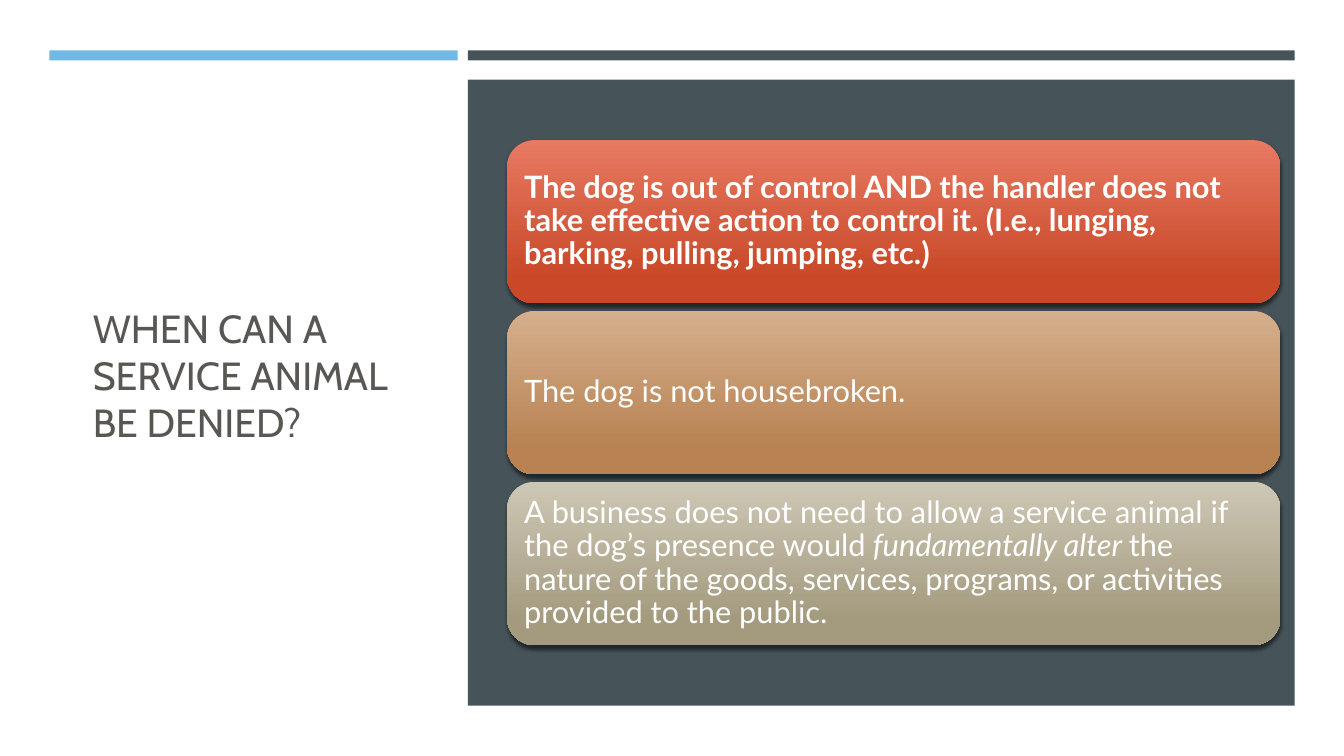
"""Build the slide on when a service animal can be denied."""
from lxml import etree
from pptx import Presentation
from pptx.dml.color import RGBColor
from pptx.enum.shapes import MSO_SHAPE
from pptx.enum.text import MSO_ANCHOR, MSO_AUTO_SIZE, PP_ALIGN
from pptx.oxml.ns import qn
from pptx.util import Inches, Pt

RECT, ROUNDED = MSO_SHAPE.RECTANGLE, MSO_SHAPE.ROUNDED_RECTANGLE
MIDDLE, LEFT = MSO_ANCHOR.MIDDLE, PP_ALIGN.LEFT
NO_AUTOFIT = MSO_AUTO_SIZE.NONE

COLORS = {"white": "FFFFFF", "title": "585753", "blue": "71B9E4",
          "slate": "465359", "shadow": "000000"}
TITLE = "WHEN CAN A SERVICE ANIMAL BE DENIED?"
PANELS = [
    ("blue", 0.49, 0.5, 4.05, 0.1),
    ("slate", 4.64, 0.5, 8.2, 0.1),
    ("slate", 4.64, 0.79, 8.2, 6.21),
]
REASONS = [
    (("E77A62", "C94828"), [
        ("The dog is out of control AND the handler does not take effective "
         "action to control it. (I.e., lunging, barking, pulling, jumping, etc.)", "bold")]),
    (("D5AF8D", "B88252"), [("The dog is not housebroken.", "")]),
    (("CDC7B5", "A49B7F"), [
        ("A business does not need to allow a service animal if the dog’s presence would", ""),
        (" fundamentally alter ", "italic"),
        ("the nature of the goods, services, programs, or activities provided "
         "to the public.", "")]),
]
CARD_LEFT, CARD_TOP, CARD_W, CARD_H, CARD_GAP = 5.03, 1.39, 7.67, 1.62, 0.075


def rgb(name):
    return RGBColor.from_string(COLORS.get(name, name))


def add_box(s, kind, left, top, width, height):
    sp = s.shapes.add_shape(kind, Inches(left), Inches(top), Inches(width), Inches(height))
    sp.shadow.inherit = False
    sp.line.fill.background()
    return sp


def style_run(r, font, size, color):
    r.font.name = font
    r.font.size = Pt(size)
    r.font.color.rgb = rgb(color)


def add_shadow(sp):
    effects = sp.element.spPr.find(qn("a:effectLst"))
    outer = etree.SubElement(effects, qn("a:outerShdw"), blurRad=str(Pt(3)),
                             dist=str(Pt(2)), dir="5400000", rotWithShape="0")
    color = etree.SubElement(outer, qn("a:srgbClr"), val=COLORS["shadow"])
    etree.SubElement(color, qn("a:alpha"), val="55000")


def add_card(s, top, gradient, runs):
    sp = add_box(s, ROUNDED, CARD_LEFT, top, CARD_W, CARD_H)
    sp.fill.gradient()
    sp.fill.gradient_angle = 270
    for stop, color, position in zip(sp.fill.gradient_stops, gradient, (0, 0.84)):
        stop.color.rgb = rgb(color)
        stop.position = position
    add_shadow(sp)

    tf = sp.text_frame
    tf.word_wrap = True
    tf.vertical_anchor = MIDDLE
    tf.margin_left = tf.margin_right = tf.margin_top = tf.margin_bottom = Inches(0.09)
    p = tf.paragraphs[0]
    p.alignment = LEFT
    p.line_spacing = 0.9
    for text, emphasis in runs:
        r = p.add_run()
        r.text = text
        style_run(r, "Lato", 22, "white")
        r.font.bold = emphasis == "bold"
        r.font.italic = emphasis == "italic"


def add_title(s):
    title = s.shapes.title
    title.left, title.top = Inches(0.82), Inches(1.14)
    title.width, title.height = Inches(3.34), Inches(5.15)
    tf = title.text_frame
    tf.text = TITLE
    tf.word_wrap = True
    tf.auto_size = NO_AUTOFIT
    tf.vertical_anchor = MIDDLE
    p = tf.paragraphs[0]
    p.alignment = LEFT
    style_run(p.runs[0], "Cabin", 28, "title")


def main():
    prs = Presentation()
    prs.slide_width, prs.slide_height = Inches(13.33), Inches(7.5)
    s = prs.slides.add_slide(prs.slide_layouts[5])
    s.background.fill.solid()
    s.background.fill.fore_color.rgb = rgb("white")

    add_title(s)
    for color, *place in PANELS:
        sp = add_box(s, RECT, *place)
        sp.fill.solid()
        sp.fill.fore_color.rgb = rgb(color)
    for i, (gradient, runs) in enumerate(REASONS):
        add_card(s, CARD_TOP + i * (CARD_H + CARD_GAP), gradient, runs)

    prs.save("out.pptx")


if __name__ == "__main__":
    main()
